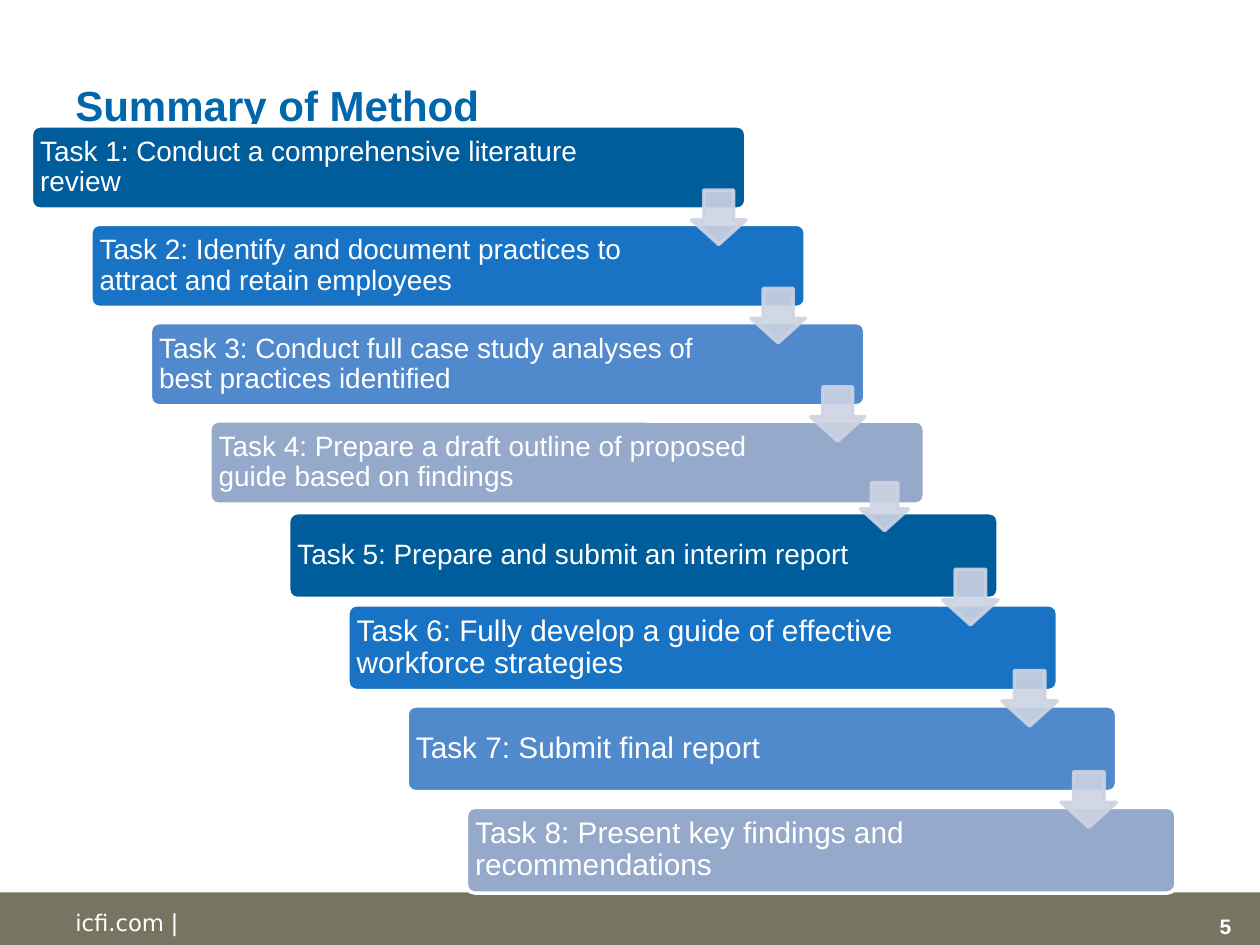
from pptx import Presentation
from pptx.dml.color import RGBColor
from pptx.enum import shapes, text
from pptx.oxml import parse_xml
from pptx.oxml.ns import nsdecls, qn
from pptx.util import Pt

THEME = {
    "font": "Arial", "address_font": "DejaVu Sans",
    "white": "FFFFFF", "title": "0067AB", "footer": "757561", "arrow": "CCD3E3",
    "steps": ["005D9C", "1973C4", "5189CD", "95A9CA"],
    "title_size": 24, "number_size": 12, "address_size": 13, "divider_size": 14,
}

TITLE = "Summary of Method"
FOOTER_ADDRESS, FOOTER_DIVIDER, SLIDE_NUMBER = "icfi.com ", "|", "5"

# Each staircase: first left edge, step to the right, bar size, arrow size,
# then one (task, type size, top) per bar.
STAIRCASES = [
    {"left": 165, "step": 33.84, "bar": (405.4, 49), "arrow": 31.7, "tasks": [
        ("Task 5: Prepare and submit an interim report", 16, 293),
        ("Task 6: Fully develop a guide of effective workforce strategies", 17, 345.6),
        ("Task 7: Submit final report", 17, 403.4),
        ("Task 8: Present key findings and recommendations", 17, 461.3)]},
    {"left": 18, "step": 34, "bar": (408.2, 47.5), "arrow": 31, "tasks": [
        ("Task 1: Conduct a comprehensive literature review", 16, 72),
        ("Task 2: Identify and document practices to attract and retain employees", 16, 128.2),
        ("Task 3: Conduct full case study analyses of best practices identified", 16, 184.4),
        ("Task 4: Prepare a draft outline of proposed guide based on findings", 16, 240.6)]},
]
ARROW_OVERLAP = 11.5
LINKING_ARROW = (491.8, 275.8, 27.4)


def colour(value):
    return RGBColor.from_string(value)


def write(shape, runs, align=text.PP_ALIGN.LEFT, anchor=text.MSO_ANCHOR.TOP,
          margins=(7.2, 3.6, 7.2, 3.6), line_spacing=1.0):
    """Fill a shape with one paragraph; a run is (words, size, colour, bold, font)."""
    frame = shape.text_frame
    frame.word_wrap = True
    frame.vertical_anchor = anchor
    (frame.margin_left, frame.margin_top,
     frame.margin_right, frame.margin_bottom) = map(Pt, margins)
    paragraph = frame.paragraphs[0]
    paragraph.alignment = align
    paragraph.line_spacing = line_spacing
    for words, size, tint, bold, font in runs:
        run = paragraph.add_run()
        run.text = words
        run.font.size, run.font.bold, run.font.name = Pt(size), bold, font
        run.font.color.rgb = colour(tint)


def add_text(slide, box, runs, **formatting):
    write(slide.shapes.add_textbox(*map(Pt, box)), runs, **formatting)


def add_block(slide, kind, box, fill, line=None):
    shape = slide.shapes.add_shape(kind, *map(Pt, box))
    shape.shadow.inherit = False
    shape.fill.solid()
    shape.fill.fore_color.rgb = colour(fill)
    if line:
        shape.line.color.rgb = colour(line)
        shape.line.width = Pt(2)
    else:
        shape.line.fill.background()
    return shape


def add_arrow(slide, left, top, size):
    """Add a square down arrow whose fill and line are 90% opaque."""
    arrow = add_block(slide, shapes.MSO_SHAPE.DOWN_ARROW, (left, top, size, size),
                      THEME["arrow"], THEME["arrow"])
    arrow.adjustments[0], arrow.adjustments[1] = 0.55, 0.45
    for tint in arrow.element.spPr.iter(qn("a:srgbClr")):
        tint.append(parse_xml(f'<a:alpha {nsdecls("a")} val="90000"/>'))


def add_staircase(slide, left, step, bar, arrow, tasks):
    """Add the bars, then an arrow from each bar down into the next."""
    width, height = bar
    for index, (task, size, top) in enumerate(tasks):
        block = add_block(slide, shapes.MSO_SHAPE.ROUNDED_RECTANGLE,
                          (left + index * step, top, width, height),
                          THEME["steps"][index], THEME["white"])
        block.adjustments[0] = 0.1
        write(block, [(task, size, THEME["white"], False, THEME["font"])],
              anchor=text.MSO_ANCHOR.MIDDLE, margins=(3.6, 3.6, 69, 3.6),
              line_spacing=0.9)
    for index, (_, _, next_top) in enumerate(tasks[1:]):
        add_arrow(slide, left + index * step + width - arrow,
                  next_top + ARROW_OVERLAP - arrow, arrow)


def main():
    presentation = Presentation()
    presentation.slide_width, presentation.slide_height = Pt(720), Pt(540)
    slide = presentation.slides.add_slide(presentation.slide_layouts[6])
    font, white = THEME["font"], THEME["white"]

    add_block(slide, shapes.MSO_SHAPE.RECTANGLE, (0, 510, 720, 30), THEME["footer"])
    add_text(slide, (657.4, 518.4, 53.3, 21.6),
             [(SLIDE_NUMBER, THEME["number_size"], white, True, font)],
             align=text.PP_ALIGN.RIGHT)
    add_text(slide, (36, 514.8, 74.2, 23.8),
             [(FOOTER_ADDRESS, THEME["address_size"], white, False, THEME["address_font"]),
              (FOOTER_DIVIDER, THEME["divider_size"], white, False, font)])
    add_text(slide, (36, 21.6, 648, 56.2),
             [(TITLE, THEME["title_size"], THEME["title"], True, font)],
             anchor=text.MSO_ANCHOR.BOTTOM)
    for staircase in STAIRCASES:
        add_staircase(slide, **staircase)
    add_arrow(slide, *LINKING_ARROW)
    presentation.save("out.pptx")


if __name__ == "__main__":
    main()
